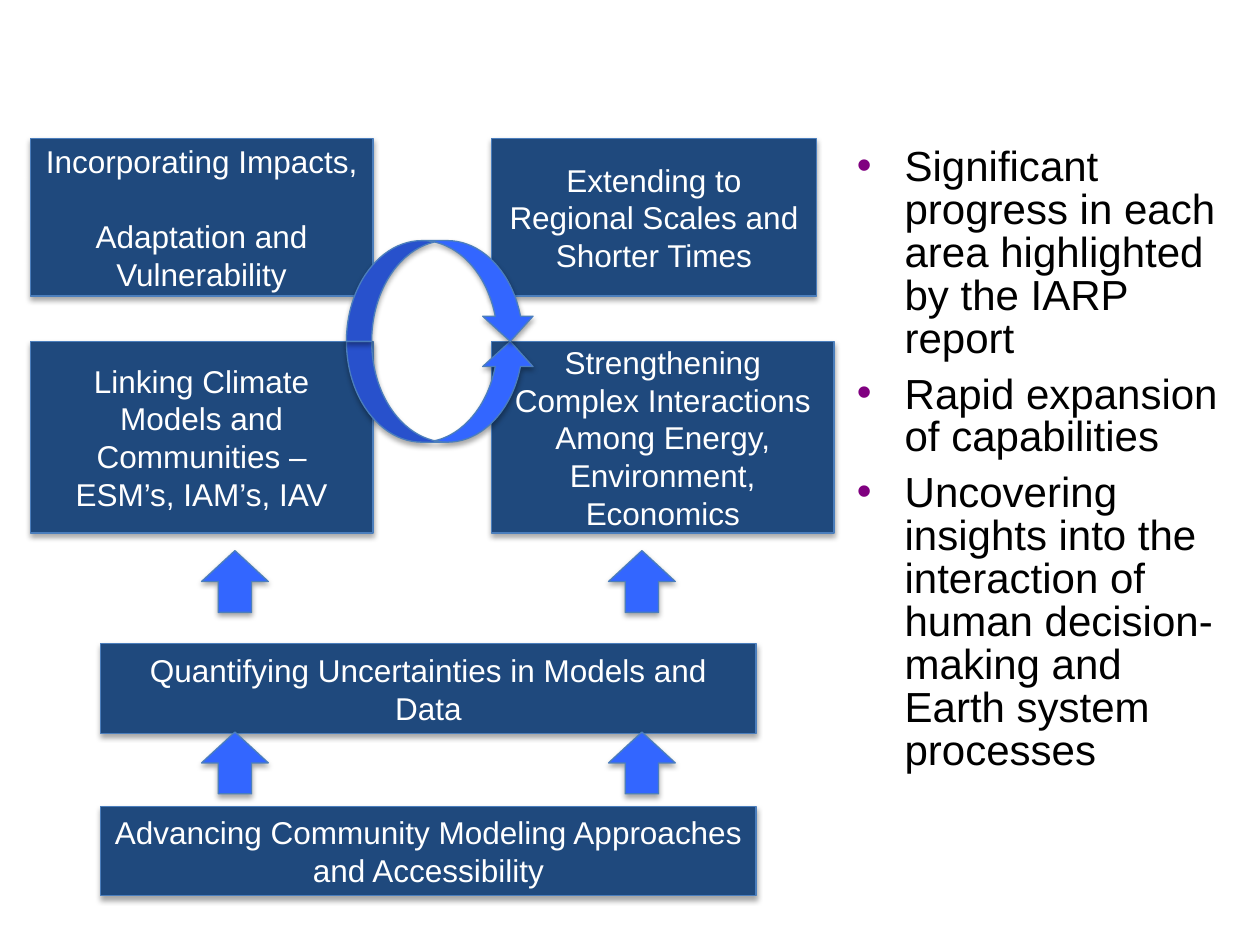
from lxml.etree import SubElement
from pptx import Presentation
from pptx.dml.color import RGBColor
from pptx.enum.shapes import MSO_SHAPE
from pptx.enum.text import MSO_ANCHOR, PP_ALIGN
from pptx.oxml.ns import qn
from pptx.util import Inches, Pt

WIDE, HIGH = 10, 7.5
THEME = {
    "font": "Arial", "box": "1F497D", "arrow": "3366FF", "edge": "4B7EBC",
    "light": "FFFFFF", "dark": "000000", "dot": "800080",
    "label": 18, "body": 24, "line": 0.75,
}

# Grid: left edges of the columns, (top, height) of the rows
COLS = {"left": 0.24, "right": 3.9, "base": 0.8, "notes": 6.8}
ROWS = {"top": (1.1, 1.25), "mid": (2.71, 1.52),
        "low": (5.11, 0.71), "foot": (6.4, 0.71)}

BOXES = [  # column, row, width, label
    ("right", "mid", 2.72, "Strengthening Complex Interactions Among Energy, "
                           "Environment, Economics"),
    ("right", "top", 2.58, "Extending to Regional Scales and Shorter Times"),
    ("left", "top", 2.72, "Incorporating Impacts, \nAdaptation and Vulnerability"),
    ("left", "mid", 2.72, "Linking Climate Models and Communities – "
                          "ESM’s, IAM’s, IAV"),
    ("base", "low", 5.2, "Quantifying Uncertainties in Models and Data"),
    ("base", "foot", 5.2, "Advancing Community Modeling Approaches and Accessibility"),
]
NOTES = [
    "Significant progress in each area highlighted by the IARP report",
    "Rapid expansion of capabilities",
    "Uncovering insights into the interaction of human decision-making "
    "and Earth system processes",
]
LOOP = (2.75, 1.5, 0.8)  # left, width, height of each half
RISE = {"cols": (1.6, 4.83), "rows": (5.81, 4.37), "size": (0.53, 0.49)}


def color(name):
    return RGBColor.from_string(THEME[name])


def style(item, **values):
    for name, value in values.items():
        setattr(item, name, value)


def write(para, text, size, tint):
    para.text = text
    for run in para.runs:
        style(run.font, name=THEME["font"], size=Pt(THEME[size]))
        run.font.color.rgb = color(tint)


def shade(shape):
    """Add a soft shadow just below the shape."""
    shape.shadow.inherit = False
    effects = shape._element.spPr.find(qn("a:effectLst"))
    outer = SubElement(effects, qn("a:outerShdw"), blurRad="40000",
                       dist="23000", dir="5400000", rotWithShape="0")
    black = SubElement(outer, qn("a:srgbClr"), val=THEME["dark"])
    SubElement(black, qn("a:alpha"), val="35000")


def draw(slide, kind, place, fill):
    shape = slide.shapes.add_shape(kind, *map(Inches, place))
    shape.fill.solid()
    shape.fill.fore_color.rgb = color(fill)
    shape.line.color.rgb = color("edge")
    shape.line.width = Pt(THEME["line"])
    shade(shape)
    return shape


def add_box(slide, col, row, width, text):
    top, height = ROWS[row]
    box = draw(slide, MSO_SHAPE.RECTANGLE, (COLS[col], top, width, height), "box")
    style(box.text_frame, word_wrap=True, vertical_anchor=MSO_ANCHOR.MIDDLE)
    para = box.text_frame.paragraphs[0]
    para.alignment = PP_ALIGN.CENTER
    write(para, text, "label", "light")


def add_notes(slide):
    place = (COLS["notes"], 1.17, WIDE - COLS["notes"] - 0.21, 5.53)
    frame = slide.shapes.add_textbox(*map(Inches, place)).text_frame
    style(frame, word_wrap=True, margin_left=0, margin_right=0,
          margin_top=0, margin_bottom=0)
    for index, text in enumerate(NOTES):
        para = frame.add_paragraph() if index else frame.paragraphs[0]
        props = para._p.get_or_add_pPr()
        props.set("marL", str(Inches(0.38)))
        props.set("indent", str(-Inches(0.38)))
        tint = SubElement(props, qn("a:buClr"))
        SubElement(tint, qn("a:srgbClr"), val=THEME["dot"])
        SubElement(props, qn("a:buFont"), typeface=THEME["font"])
        SubElement(props, qn("a:buChar"), char="•")
        style(para, line_spacing=0.85, space_before=Pt(7.5 if index else 0))
        write(para, text, "body", "dark")


def add_arrows(slide):
    left, width, height = LOOP
    seam = ROWS["mid"][0]
    for kind, top in ((MSO_SHAPE.CURVED_UP_ARROW, seam),
                      (MSO_SHAPE.CURVED_DOWN_ARROW, seam - height)):
        draw(slide, kind, (left, top, width, height), "arrow")
    for top in RISE["rows"]:
        for left in RISE["cols"]:
            draw(slide, MSO_SHAPE.UP_ARROW, (left, top, *RISE["size"]), "arrow")


def main():
    deck = Presentation()
    style(deck, slide_width=Inches(WIDE), slide_height=Inches(HIGH))
    slide = deck.slides.add_slide(deck.slide_layouts[6])
    add_notes(slide)
    for box in BOXES:
        add_box(slide, *box)
    add_arrows(slide)
    deck.save("out.pptx")


if __name__ == "__main__":
    main()
